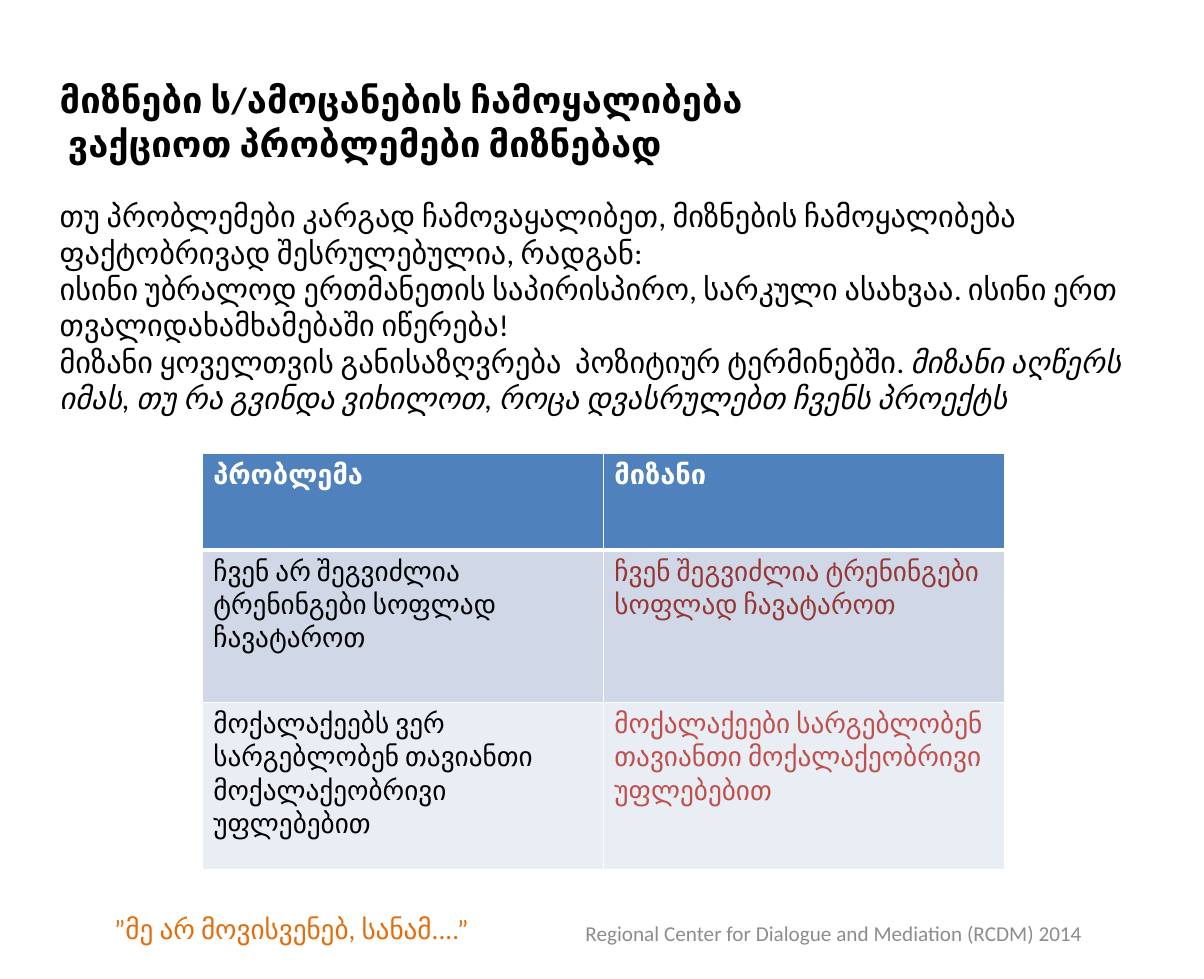
from lxml import etree
from pptx import Presentation
from pptx.dml.color import RGBColor
from pptx.enum.text import MSO_ANCHOR, PP_ALIGN
from pptx.oxml.ns import qn
from pptx.util import Inches, Pt

MIDDLE = MSO_ANCHOR.MIDDLE
LEFT, CENTER = PP_ALIGN.LEFT, PP_ALIGN.CENTER

FONT = "Calibri"
BLACK = RGBColor(0x00, 0x00, 0x00)
WHITE = RGBColor(0xFF, 0xFF, 0xFF)
BLUE = RGBColor(0x4F, 0x81, 0xBD)
BAND_DARK = RGBColor(0xD0, 0xD8, 0xE8)
BAND_LIGHT = RGBColor(0xE9, 0xED, 0xF4)
DARK_RED = RGBColor(0x95, 0x37, 0x35)
RED = RGBColor(0xC0, 0x50, 0x4D)
ORANGE = RGBColor(0xE4, 0x6C, 0x0A)
GRAY = RGBColor(0x8C, 0x8C, 0x8C)

# Content
TITLE = [
    "მიზნები ს/ამოცანების ჩამოყალიბება",
    " ვაქციოთ პრობლემები მიზნებად",
]
# Each paragraph is a list of (text, italic)
BODY = [
    [("თუ პრობლემები კარგად ჩამოვაყალიბეთ, მიზნების ჩამოყალიბება "
      "ფაქტობრივად შესრულებულია, რადგან:", False)],
    [("ისინი უბრალოდ ერთმანეთის საპირისპირო, სარკული ასახვაა. ისინი ერთ "
      "თვალიდახამხამებაში იწერება!", False)],
    [("მიზანი ყოველთვის განისაზღვრება  პოზიტიურ ტერმინებში. ", False),
     ("მიზანი აღწერს იმას, თუ რა გვინდა ვიხილოთ, როცა დვასრულებთ "
      "ჩვენს პროექტს", True)],
]
# Row height, fill, text colours, bold, texts
ROWS = [
    (0.89, BLUE, (WHITE, WHITE), True, ("პრობლემა", "მიზანი")),
    (1.4, BAND_DARK, (BLACK, DARK_RED), False,
     ("ჩვენ არ შეგვიძლია ტრენინგები სოფლად ჩავატაროთ",
      "ჩვენ შეგვიძლია ტრენინგები სოფლად ჩავატაროთ")),
    (1.54, BAND_LIGHT, (BLACK, RED), False,
     ("მოქალაქეებს ვერ სარგებლობენ თავიანთი მოქალაქეობრივი უფლებებით",
      "მოქალაქეები სარგებლობენ თავიანთი მოქალაქეობრივი უფლებებით")),
]
QUOTE = "”მე არ მოვისვენებ, სანამ....”"
FOOTER = "Regional Center for Dialogue and Mediation (RCDM) 2014"

TABLE_LEFT, TABLE_TOP, TABLE_WIDTH = 1.86, 4.16, 7.37


def add_span(para, text, size, color, bold=False, italic=False):
    span = para.add_run()
    span.text = text
    font = span.font
    font.name, font.size, font.bold, font.italic = FONT, Pt(size), bold, italic
    font.color.rgb = color


def add_box(page, left, top, width, height):
    box = page.shapes.add_textbox(
        Inches(left), Inches(top), Inches(width), Inches(height))
    box.text_frame.word_wrap = True
    return box.text_frame


def add_line(page, place, text, size, color, align):
    frame = add_box(page, *place)
    para = frame.paragraphs[0]
    para.alignment = align
    add_span(para, text, size, color)
    return frame


def set_borders(cell, bottom_width):
    properties = cell._tc.get_or_add_tcPr()
    widths = {"a:lnL": 1, "a:lnR": 1, "a:lnT": 1, "a:lnB": bottom_width}
    for position, (tag, width) in enumerate(widths.items()):
        line = etree.Element(qn(tag), w=str(Pt(width)))
        fill = etree.SubElement(line, qn("a:solidFill"))
        etree.SubElement(fill, qn("a:srgbClr"), val=str(WHITE))
        properties.insert(position, line)


def add_main_text(page):
    frame = add_box(page, 0.45, 0.66, 10.08, 5.62)
    for index, text in enumerate(TITLE):
        para = frame.add_paragraph() if index else frame.paragraphs[0]
        add_span(para, text, 24, BLACK, bold=True)
    para.space_after = Pt(22)
    for spans in BODY:
        para = frame.add_paragraph()
        for text, italic in spans:
            add_span(para, text, 20, BLACK, italic=italic)


def add_goal_table(page):
    height = sum(row[0] for row in ROWS)
    table = page.shapes.add_table(
        len(ROWS), 2, Inches(TABLE_LEFT), Inches(TABLE_TOP),
        Inches(TABLE_WIDTH), Inches(height)).table
    for index, (height, fill, colors, bold, texts) in enumerate(ROWS):
        table.rows[index].height = Inches(height)
        for column, (text, color) in enumerate(zip(texts, colors)):
            cell = table.cell(index, column)
            cell.fill.solid()
            cell.fill.fore_color.rgb = fill
            add_span(cell.text_frame.paragraphs[0], text, 18, color, bold)
            set_borders(cell, 3 if index == 0 else 1)


def main():
    deck = Presentation()
    deck.slide_width, deck.slide_height = Inches(11.06), Inches(8.99)
    page = deck.slides.add_slide(deck.slide_layouts[6])

    add_main_text(page)
    add_goal_table(page)

    # Closing quote and footer
    add_line(page, (0.95, 8.33, 9.17, 0.42), QUOTE, 18, ORANGE, LEFT)
    footer = add_line(page, (4.95, 8.33, 5.42, 0.48), FOOTER, 14, GRAY, CENTER)
    footer.vertical_anchor = MIDDLE

    deck.save("out.pptx")


if __name__ == "__main__":
    main()
